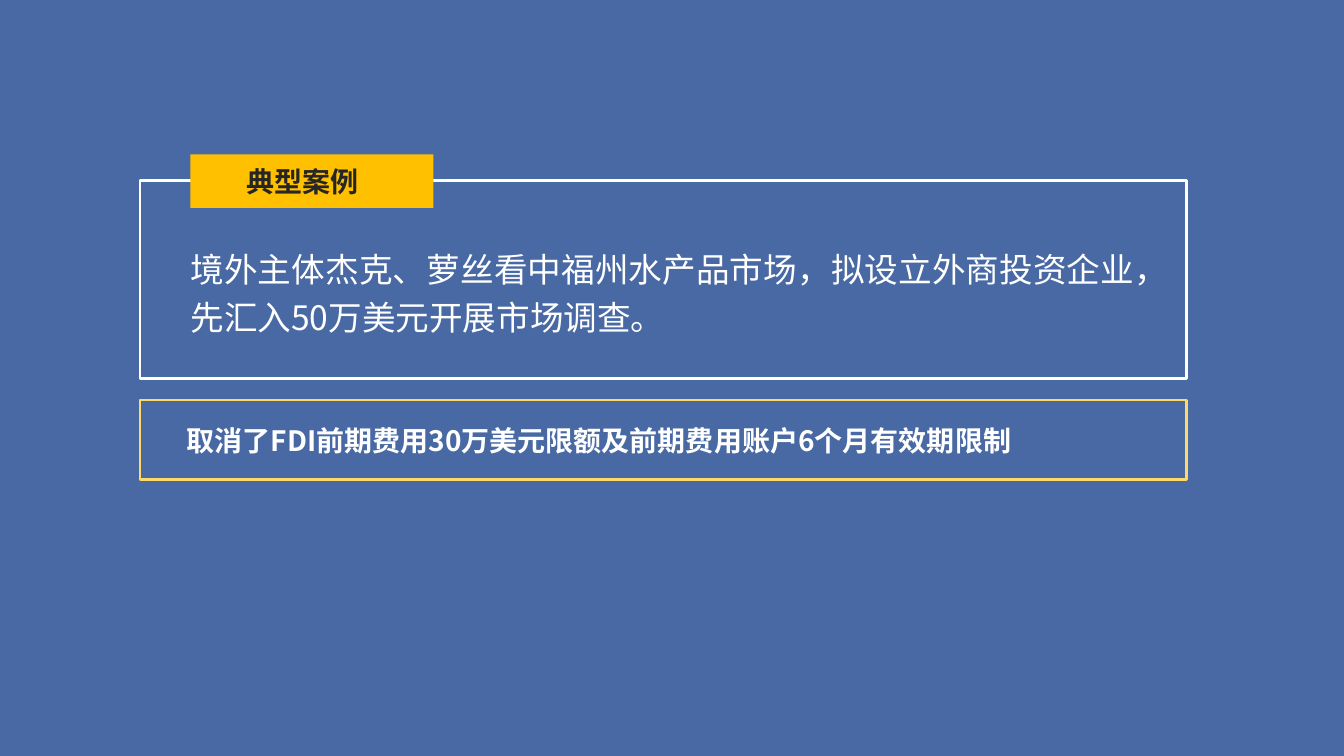
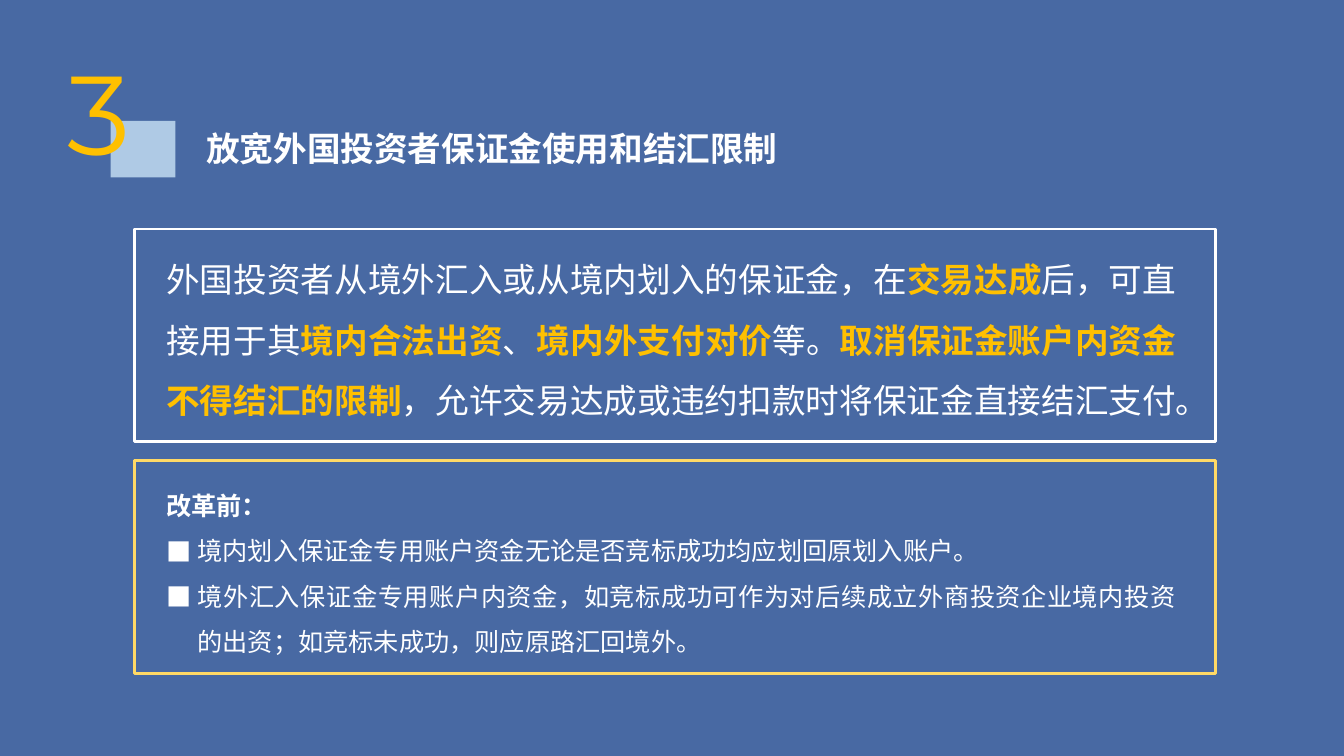
import pptx
import pptx.dml.color
import pptx.enum.shapes
import pptx.enum.text
import pptx.oxml.ns
import pptx.util
from lxml import etree

Cm = pptx.util.Cm
Pt = pptx.util.Pt
rgb = pptx.dml.color.RGBColor.from_string
qn = pptx.oxml.ns.qn
RECTANGLE = pptx.enum.shapes.MSO_SHAPE.RECTANGLE
ANCHOR = pptx.enum.text.MSO_ANCHOR
ALIGN = pptx.enum.text.PP_ALIGN

BLUE, PALE_BLUE = "4869A3", "AFCAE5"
WHITE, DARK = "FFFFFF", "262626"
GOLD, PALE_GOLD = "FFC000", "FFD966"
CJK_FONT = "Noto Sans CJK SC"


def add_box(slide, bounds, fill=None, line=None):
    box = slide.shapes.add_shape(RECTANGLE, *[Cm(length) for length in bounds])
    box.shadow.inherit = False
    if fill:
        box.fill.solid()
        box.fill.fore_color.rgb = rgb(fill)
    else:
        box.fill.background()
    if line:
        box.line.color.rgb = rgb(line)
        box.line.width = Pt(2)
    else:
        box.line.fill.background()
    return box


def write(shape, paragraphs, size, insets=(0.25, 0.13, 0.25, 0.13), pitch=None,
          anchor=ANCHOR.MIDDLE, align=ALIGN.JUSTIFY, font=CJK_FONT):
    frame = shape.text_frame
    frame.word_wrap = True
    frame.auto_size = pptx.enum.text.MSO_AUTO_SIZE.NONE
    frame.vertical_anchor = anchor
    frame.margin_left, frame.margin_top, frame.margin_right, frame.margin_bottom = [
        Cm(inset) for inset in insets]
    for index, runs in enumerate(paragraphs):
        paragraph = frame.add_paragraph() if index else frame.paragraphs[0]
        paragraph.alignment = align
        if pitch:
            paragraph.line_spacing = Pt(pitch)
        for text, color, bold in runs:
            run = paragraph.add_run()
            run.text = text
            run.font.size = Pt(size)
            run.font.bold = bold
            run.font.name = font
            run.font.color.rgb = rgb(color)
            properties = run.font._element
            properties.set("lang", "zh-CN")
            etree.SubElement(properties, qn("a:ea")).set("typeface", CJK_FONT)


deck = pptx.Presentation()
deck.slide_width, deck.slide_height = Cm(33.87), Cm(19.05)
background = deck.slide_master.background.fill
background.solid()
background.fore_color.rgb = rgb(BLUE)
title_only = deck.slide_layouts[5]

case_slide = deck.slides.add_slide(title_only)
case = add_box(case_slide, (3.53, 4.55, 26.37, 4.98), line=WHITE)
write(case, [[("境外主体杰克、萝丝看中福州水产品市场，拟设立外商投资企业，先汇入50万美元开展市场调查。", WHITE, False)]],
      24, (1.27, 1.52, 1.3, 0), pitch=34.3, anchor=ANCHOR.TOP)
outcome = add_box(case_slide, (3.53, 10.08, 26.37, 2.01), line=PALE_GOLD)
write(outcome, [[("取消了FDI前期费用30万美元限额及前期费用账户6个月有效期限制", WHITE, True)]],
      20, (1.17, 0, 1.3, 0))
case_tag = case_slide.shapes.title
case_tag.left, case_tag.top, case_tag.width, case_tag.height = Cm(4.8), Cm(3.89), Cm(6.12), Cm(1.35)
case_tag.fill.solid()
case_tag.fill.fore_color.rgb = rgb(GOLD)
write(case_tag, [[("典型案例", DARK, True)]], 20, (1.4, 0, 0, 0), align=ALIGN.LEFT, font="Arial")
case_slide.shapes._spTree.append(case_tag._element)

policy_slide = deck.slides.add_slide(title_only)
heading = policy_slide.shapes.title
heading.left, heading.top, heading.width, heading.height = Cm(4.95), Cm(3.1), Cm(22), Cm(1.27)
write(heading, [[("放宽外国投资者保证金使用和结汇限制", WHITE, True)]], 24, align=ALIGN.LEFT)
add_box(policy_slide, (2.79, 3.05, 1.63, 1.42), fill=PALE_BLUE)
number = policy_slide.shapes.add_textbox(Cm(1.45), Cm(0.97), Cm(2.44), Cm(3.81))
write(number, [[("3", GOLD, False)]], 80, anchor=ANCHOR.TOP, align=ALIGN.LEFT, font="Montserrat")

policy = add_box(policy_slide, (3.4, 5.77, 27.23, 5.36), line=WHITE)
write(policy, [[
    ("外国投资者从境外汇入或从境内划入的保证金，在", WHITE, False),
    ("交易达成", GOLD, True),
    ("后，可直接用于其", WHITE, False),
    ("境内合法出资", GOLD, True),
    ("、", WHITE, False),
    ("境内外支付对价", GOLD, True),
    ("等。", WHITE, False),
    ("取消保证金账户内资金不得结汇的限制", GOLD, True),
    ("，允许交易达成或违约扣款时将保证金直接结汇支付。", WHITE, False),
]], 24, (0.79, 0.25, 0.99, 0), pitch=43.2, anchor=ANCHOR.TOP)

before = add_box(policy_slide, (3.4, 11.61, 27.23, 5.36), line=PALE_GOLD)
write(before, [
    [("改革前：", WHITE, True)],
    [("境内划入保证金专用账户资金无论是否竞标成功均应划回原划入账户。", WHITE, False)],
    [("境外汇入保证金专用账户内资金，如竞标成功可作为对后续成立外商投资企业境内投资的出资；如竞标未成功，则应原路汇回境外。", WHITE, False)],
], 18, (0.79, 0.36, 0.99, 0), pitch=32.4, anchor=ANCHOR.TOP)
for rule in before.text_frame.paragraphs[1:]:
    properties = rule._p.get_or_add_pPr()
    properties.set("marL", str(Cm(0.79)))
    properties.set("indent", str(-Cm(0.79)))
    etree.SubElement(properties, qn("a:buFont")).set("typeface", CJK_FONT)
    etree.SubElement(properties, qn("a:buChar")).set("char", "■")

deck.save("out.pptx")
